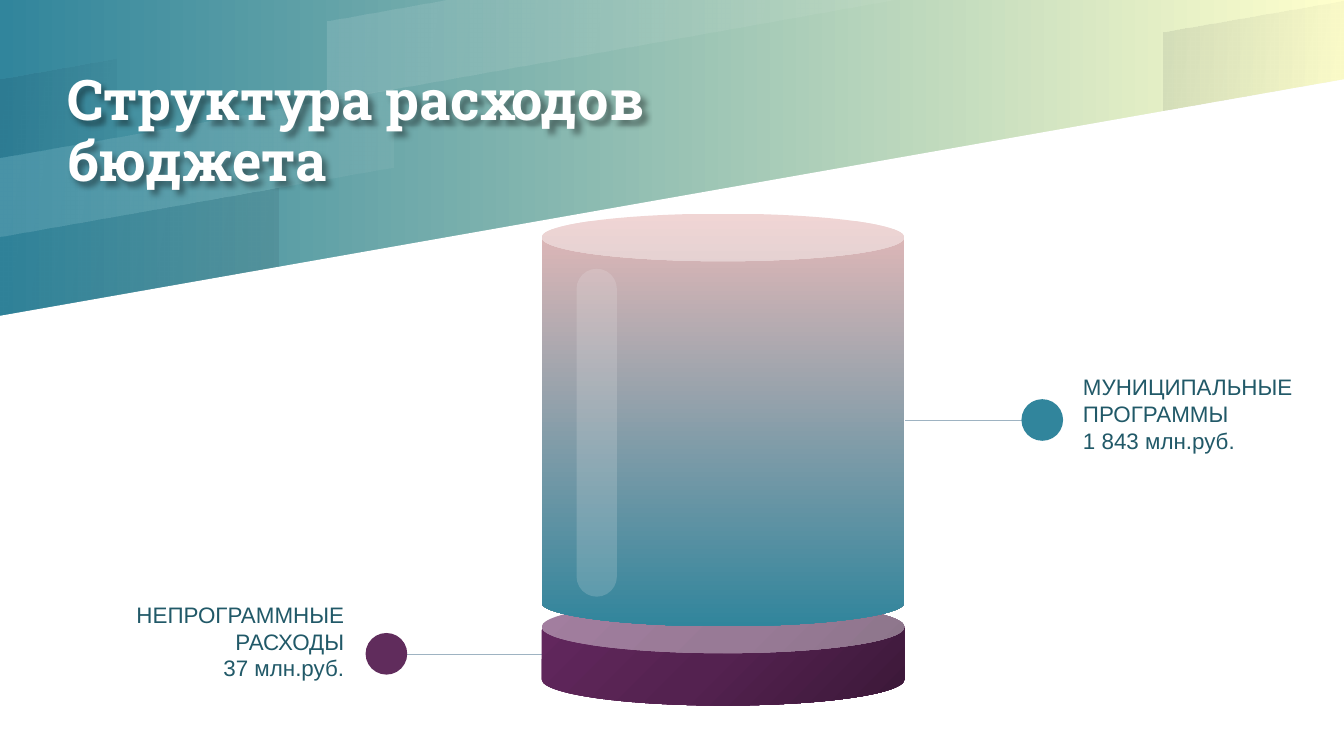
"""Builds the budget spending slide with a two-part cylinder."""
import pptx
import pptx.util
import pptx.dml.color
import pptx.enum.shapes
import pptx.enum.text
import pptx.oxml
import pptx.oxml.ns
import lxml.etree

WIDE = 10
HIGH = WIDE * 9 / 16
EDGE, SLOPE, STEP = 2.35, 0.176, 0.587
TEAL, PLUM, INK, RULE = "31859C", "602C5C", "215968", "9EB3C2"
LIGHT = [(0, "FFFFFF", 12), (100, "FFFFFF", 5)]
DARK = [(0, "00001A", 8), (100, "00001A", 2)]
DEEP = [(0, "00001A", 2), (100, "00001A", 8)]
BACK = [(0, TEAL, 100), (100, "FFFFCC", 100)]
BANDS = [
    (2.44, 6.65, 2, LIGHT),
    (0, 0.87, 2, DARK),
    (0, 2.07, 0, DEEP),
    (8.66, 10, 0, DARK),
    (0, 2.93, 1, LIGHT),
]
TITLE = "Структура расходов бюджета"
LABELS = [
    ("МУНИЦИПАЛЬНЫЕ ПРОГРАММЫ\n1 843 млн.руб.", (7.96, 2.32, 1.77, 1.51), "LEFT", 0.1),
    ("НЕПРОГРАММНЫЕ\nРАСХОДЫ\n37 млн.руб.", (0.62, 4.43, 2.04, 0.88), "RIGHT", 0.3),
]
LINES = [(7.66, 6.73, 3.13), (2.8, 4.67, 4.87)]
CANS = [
    ((4.03, 4.47, 2.7, 0.78), 0.5,
     [(0, "3B1838", 100), (50, "542250", 100), (100, "64285F", 100)], None),
    ((4.03, 1.59, 2.7, 3.07), 0.131, [(0, "E6B9B8", 100), (100, TEAL, 100)], 90),
]
DOTS = [(7.6, 2.97, TEAL), (2.72, 4.71, PLUM)]
DOT = 0.31
SHINE = (4.29, 2, 0.3, 2.44)

NS = pptx.oxml.ns.nsdecls("a")
KIND = pptx.enum.shapes.MSO_SHAPE
inch = pptx.util.Inches


def color(text):
    return pptx.dml.color.RGBColor.from_string(text)


def paint(fill, holder, stops, angle):
    fill.background()
    marks = "".join(
        f'<a:gs pos="{pos * 1000}"><a:srgbClr val="{hue}">'
        f'<a:alpha val="{part * 1000}"/></a:srgbClr></a:gs>'
        for pos, hue, part in stops)
    if angle is None:
        way = '<a:path path="circle"><a:fillToRect l="100000" t="100000"/></a:path>'
    else:
        way = f'<a:lin ang="{angle * 60000}" scaled="0"/>'
    node = pptx.oxml.parse_xml(
        f'<a:gradFill {NS} rotWithShape="1"><a:gsLst>{marks}</a:gsLst>{way}</a:gradFill>')
    old = holder.find(pptx.oxml.ns.qn("a:noFill"))
    holder.replace(old, node)


def solid(shape, hue, part=100):
    shape.fill.solid()
    shape.fill.fore_color.rgb = color(hue)
    if part < 100:
        tone = shape._element.spPr.find(".//" + pptx.oxml.ns.qn("a:srgbClr"))
        lxml.etree.SubElement(tone, pptx.oxml.ns.qn("a:alpha"), val=str(part * 1000))


def plain(shape):
    shape.shadow.inherit = False
    shape.line.fill.background()
    return shape


def add(slide, kind, box):
    return plain(slide.shapes.add_shape(kind, *map(inch, box)))


def outline(slide, points):
    dots = [(round(x * 1000), round(y * 1000)) for x, y in points]
    form = slide.shapes.build_freeform(*dots[0], scale=914.4)
    form.add_line_segments(dots[1:], close=True)
    return plain(form.convert_to_shape())


def band(slide, left, right, row, stops):
    def rise(x, level):
        return max(0, EDGE - SLOPE * x - STEP * level)

    turn = min(right, (EDGE - STEP * (row + 1)) / SLOPE)
    shape = outline(slide, [
        (left, rise(left, row)), (right, rise(right, row)),
        (right, rise(right, row + 1)), (turn, rise(turn, row + 1)),
        (left, rise(left, row + 1))])
    paint(shape.fill, shape._element.spPr, stops, 10)


def write(slide, text, box, pads, font, size, hue, align="LEFT"):
    shape = slide.shapes.add_textbox(*map(inch, box))
    frame = shape.text_frame
    frame.word_wrap = True
    frame.vertical_anchor = pptx.enum.text.MSO_ANCHOR.MIDDLE
    (frame.margin_left, frame.margin_top,
     frame.margin_right, frame.margin_bottom) = map(inch, pads)
    frame.text = text
    for para in frame.paragraphs:
        para.alignment = getattr(pptx.enum.text.PP_ALIGN, align)
        for run in para.runs:
            run.font.name = font
            run.font.size = pptx.util.Pt(size)
            run.font.color.rgb = color(hue)
    return shape


def title(slide):
    shape = write(slide, TITLE, (0.5, 0, 6, 1.98), [0] * 4, "Roboto Slab", 30, "FFFFFF")
    para = shape.text_frame.paragraphs[0]
    para.line_spacing = 0.9
    para.runs[0].font.bold = True
    shape._element.spPr.append(pptx.oxml.parse_xml(
        f'<a:effectLst {NS}><a:outerShdw blurRad="38100" dist="38100" dir="2700000">'
        '<a:srgbClr val="000000"><a:alpha val="40000"/></a:srgbClr>'
        '</a:outerShdw></a:effectLst>'))


def rule(slide, start, end, y):
    line = slide.shapes.add_connector(
        pptx.enum.shapes.MSO_CONNECTOR.STRAIGHT, *map(inch, (start, y, end, y)))
    line.line.color.rgb = color(RULE)
    line.line.width = pptx.util.Pt(0.75)
    lxml.etree.SubElement(line._element.spPr, pptx.oxml.ns.qn("a:effectLst"))


def main():
    deck = pptx.Presentation()
    deck.slide_width, deck.slide_height = inch(WIDE), inch(HIGH)
    slide = deck.slides.add_slide(deck.slide_layouts[6])
    fill = slide.background.fill
    fill.background()
    paint(fill, slide._element.cSld.bg.bgPr, BACK, 0)
    page = outline(slide, [(0, HIGH), (WIDE, HIGH), (WIDE, EDGE - SLOPE * WIDE), (0, EDGE)])
    solid(page, "FFFFFF")
    for item in BANDS:
        band(slide, *item)
    title(slide)
    for text, box, align, foot in LABELS:
        write(slide, text, box, (0.1, 0.1, 0.1, foot), "Arial", 12, INK, align)
    for item in LINES:
        rule(slide, *item)
    for box, bend, stops, angle in CANS:
        can = add(slide, KIND.CAN, box)
        can.adjustments[0] = bend
        paint(can.fill, can._element.spPr, stops, angle)
    for left, top, hue in DOTS:
        solid(add(slide, KIND.OVAL, (left, top, DOT, DOT)), hue)
    shine = add(slide, KIND.ROUNDED_RECTANGLE, SHINE)
    shine.adjustments[0] = 0.5
    solid(shine, "F2F2F2", 18)
    deck.save("out.pptx")


if __name__ == "__main__":
    main()
